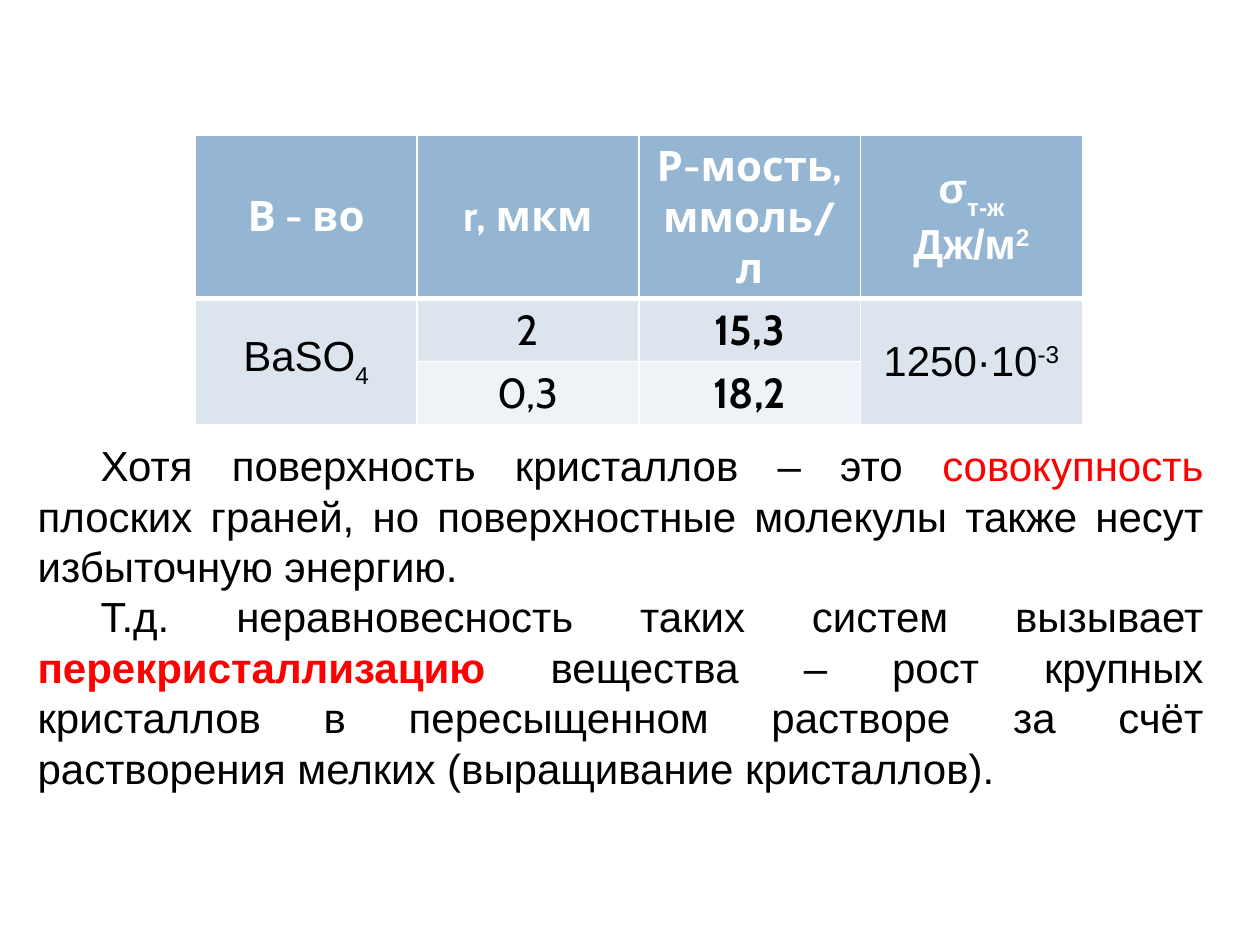
from lxml import etree
from pptx import Presentation
from pptx.dml.color import RGBColor
from pptx.enum.text import MSO_ANCHOR, MSO_AUTO_SIZE, PP_ALIGN
from pptx.oxml.ns import qn
from pptx.util import Inches, Pt

CENTER, JUSTIFY = PP_ALIGN.CENTER, PP_ALIGN.JUSTIFY
TOP, MIDDLE = MSO_ANCHOR.TOP, MSO_ANCHOR.MIDDLE

THEME = {
    "text": "000000", "accent": "FF0000", "white": "FFFFFF",
    "header": "94B6D2", "band1": "DCE5EE", "band2": "EEF3F7",
    "size": 24, "body_font": "Arial", "table_font": "Cabin",
    "border": 1, "header_border": 3,
}
SUB, SUP = -30000, 30000


def add_runs(p, runs, align, **base):
    """Each run is (text, format values that differ from base)."""
    p.alignment = align
    for text, changes in runs:
        fmt = {"size": Pt(THEME["size"]), "bold": False, "color": "text", **base, **changes}
        r = p.add_run()
        r.text = text
        r.font.color.rgb = RGBColor.from_string(THEME[fmt.pop("color")])
        baseline = fmt.pop("baseline", None)
        for name, value in fmt.items():
            setattr(r.font, name, value)
        if baseline:
            r.font._element.set("baseline", str(baseline))


def set_borders(cell, widths):
    tcPr = cell._tc.get_or_add_tcPr()
    for i, (side, width) in enumerate(widths.items()):
        ln = etree.Element(qn("a:" + side), w=str(Pt(width)))
        fill = etree.SubElement(ln, qn("a:solidFill"))
        etree.SubElement(fill, qn("a:srgbClr"), val=THEME["white"])
        tcPr.insert(i, ln)


prs = Presentation()
prs.slide_width, prs.slide_height = Inches(10), Inches(7.5)
s = prs.slides.add_slide(prs.slide_layouts[6])

# Explanation under the table
tb = s.shapes.add_textbox(Inches(0.2), Inches(3.44), Inches(9.45), Inches(2.93))
tf = tb.text_frame
tf.word_wrap = True
tf.auto_size = MSO_AUTO_SIZE.SHAPE_TO_FIT_TEXT
paragraphs = [
    [("Хотя поверхность кристаллов – это ", {}),
     ("совокупность", {"color": "accent"}),
     (" плоских граней, но поверхностные молекулы также несут избыточную энергию.", {})],
    [("Т.д. неравновесность таких систем вызывает ", {}),
     ("перекристаллизацию", {"color": "accent", "bold": True}),
     (" вещества – рост крупных кристаллов в пересыщенном растворе за счёт "
      "растворения мелких (выращивание кристаллов).", {})],
]
for i, runs in enumerate(paragraphs):
    p = tf.paragraphs[0] if i == 0 else tf.add_paragraph()
    add_runs(p, runs, JUSTIFY, name=THEME["body_font"])
    pPr = p._p.get_or_add_pPr()
    pPr.set("marL", "0")
    pPr.set("indent", str(Inches(0.5)))

# Solubility table: each cell is a list of paragraphs, None is merged upwards
arial = {"name": THEME["body_font"]}
bold = {"bold": True}
rows = [
    [[[("В - во", {})]],
     [[("r, мкм", {})]],
     [[("Р-мость, ммоль/л", {})]],
     [[("σ", arial), ("т-ж", {**arial, "baseline": SUB})],
      [("Дж/м", arial), ("2", {**arial, "baseline": SUP})]]],
    [[[("BaSO", arial), ("4", {**arial, "baseline": SUB})]],
     [[("2", {})]],
     [[("15,3", bold)]],
     [[("1250·10", arial), ("-3", {**arial, "baseline": SUP})]]],
    [None, [[("0,3", {})]], [[("18,2", bold)]], None],
]
row_heights = [0.87, 0.5, 0.5]
row_fills = ["header", "band1", "band2"]
table = s.shapes.add_table(3, 4, Inches(1.55), Inches(1.07), Inches(7.06), Inches(1.87)).table
for col in table.columns:
    col.width = Inches(1.76)
for col in (0, 3):
    table.cell(1, col).merge(table.cell(2, col))

for i, row in enumerate(rows):
    table.rows[i].height = Inches(row_heights[i])
    header = i == 0
    for j, content in enumerate(row):
        cell = table.cell(i, j)
        cell.fill.solid()
        fill = row_fills[i] if content else "band1"
        cell.fill.fore_color.rgb = RGBColor.from_string(THEME[fill])
        thin, thick = THEME["border"], THEME["header_border"]
        set_borders(cell, {"lnL": thin, "lnR": thin,
                           "lnT": thick if i == 1 else thin,
                           "lnB": thick if header else thin})
        cell.vertical_anchor = TOP if (i, j) == (0, 2) else MIDDLE
        for k, runs in enumerate(content or []):
            tf = cell.text_frame
            p = tf.paragraphs[0] if k == 0 else tf.add_paragraph()
            add_runs(p, runs, CENTER, name=THEME["table_font"], bold=header,
                     color="white" if header else "text")

prs.save("out.pptx")
